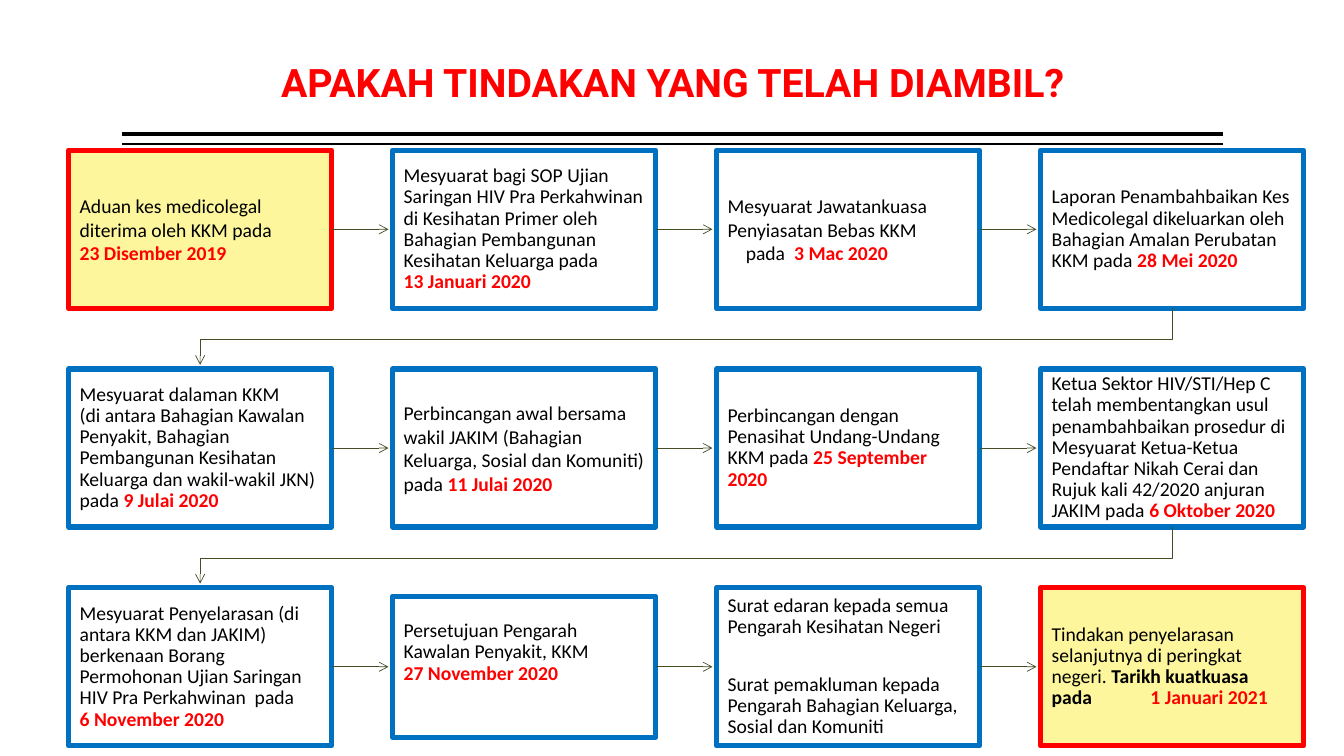
from lxml import etree
from pptx import Presentation
from pptx import util as u
from pptx.dml.color import RGBColor
from pptx.enum import shapes, text
from pptx.oxml import ns

PX = 9144
WIDE, HIGH = 1333, 750
FLOW = (68, 149, 1225, 591)
COLS, ROWS = 4, 3
BOX_W, BOX_H = 261, 157
SHORT = 140
GAP = 4
INSET = 11
RED, BLUE, BLACK = "FF0000", "0070C0", "000000"
CREAM, OLIVE = "FDF69C", "444D26"
MARKS = {"!": (RED, True), "*": (BLACK, True)}

STEPS = [
    ["Aduan kes medicolegal diterima oleh KKM pada", "|!23 Disember 2019"],
    ["Mesyuarat bagi SOP Ujian Saringan HIV Pra Perkahwinan di Kesihatan Primer oleh "
     "Bahagian Pembangunan Kesihatan Keluarga pada\n|!13 Januari 2020"],
    ["Mesyuarat Jawatankuasa Penyiasatan Bebas KKM", "pada  |!3 Mac 2020"],
    ["Laporan Penambahbaikan Kes Medicolegal dikeluarkan oleh Bahagian Amalan "
     "Perubatan KKM pada |!28 Mei 2020"],
    ["Mesyuarat dalaman KKM\n(di antara Bahagian Kawalan Penyakit, Bahagian Pembangunan "
     "Kesihatan Keluarga dan wakil-wakil JKN) pada |!9 Julai 2020"],
    ["Perbincangan awal bersama wakil JAKIM (Bahagian Keluarga, Sosial dan Komuniti) "
     "pada |!11 Julai 2020"],
    ["Perbincangan dengan Penasihat Undang-Undang KKM pada |!25 September 2020"],
    ["Ketua Sektor HIV/STI/Hep C telah membentangkan usul penambahbaikan prosedur di "
     "Mesyuarat Ketua-Ketua Pendaftar Nikah Cerai dan Rujuk kali 42/2020 anjuran JAKIM "
     "pada |!6 Oktober 2020"],
    ["Mesyuarat Penyelarasan (di antara KKM dan JAKIM) berkenaan Borang Permohonan "
     "Ujian Saringan HIV Pra Perkahwinan  pada\n|!6 November 2020"],
    ["Persetujuan Pengarah Kawalan Penyakit, KKM\n|!27 November 2020"],
    ["Surat edaran kepada semua Pengarah Kesihatan Negeri",
     "Surat pemakluman kepada Pengarah Bahagian Keluarga, Sosial dan Komuniti"],
    ["Tindakan penyelarasan selanjutnya di peringkat negeri. |*Tarikh kuatkuasa "
     "pada\t|!1 Januari 2021"],
]
LOOSE = (0, 2, 5)
ENDS = (0, 11)
INDENT, LETTER, APPROVE, START = 2, 10, 9, 11


def px(n):
    return u.Emu(round(n * PX))


def color(code):
    return RGBColor.from_string(code)


def stroke(shape, code, points, arrow=False):
    shape.line.color.rgb = color(code)
    shape.line.width = u.Pt(points)
    if arrow:
        ln = shape.element.spPr.find(ns.qn("a:ln"))
        etree.SubElement(ln, ns.qn("a:tailEnd"), type="arrow")


def link(slide, x1, y1, x2, y2, code, points, arrow=False):
    line = slide.shapes.add_connector(
        shapes.MSO_CONNECTOR.STRAIGHT, px(x1), px(y1), px(x2), px(y2))
    stroke(line, code, points, arrow)
    etree.SubElement(line.element.spPr, ns.qn("a:effectLst"))
    return line


def turn(slide, x1, y1, x2, y2):
    mid = y1 + 31
    form = slide.shapes.build_freeform(px(x1), px(y1), scale=1.0)
    form.add_line_segments(
        [(px(x), px(y)) for x, y in ((x1, mid), (x2, mid), (x2, y2))], close=False)
    bend = form.convert_to_shape()
    bend.fill.background()
    bend.shadow.inherit = False
    stroke(bend, OLIVE, 0.5, True)


def style(run, code, bold, size=14, face="Calibri"):
    run.font.name = face
    run.font.size = u.Pt(size)
    run.font.bold = bold
    run.font.color.rgb = color(code)


def write(para, words, tight):
    para.alignment = text.PP_ALIGN.LEFT
    para.line_spacing = 0.9 if tight else 1.0
    for part in filter(None, words.split("|")):
        code, bold = MARKS.get(part[0], (BLACK, False))
        for i, row in enumerate(part.lstrip("!*").split("\n")):
            if i:
                para.add_line_break()
            if row:
                run = para.add_run()
                run.text = row
                style(run, code, bold)


def step(slide, index, x, y, w, h):
    box = slide.shapes.add_shape(
        shapes.MSO_SHAPE.RECTANGLE, px(x), px(y), px(w), px(h))
    box.shadow.inherit = False
    if index in ENDS:
        box.fill.solid()
        box.fill.fore_color.rgb = color(CREAM)
    else:
        box.fill.background()
    stroke(box, RED if index in ENDS else BLUE, 3.78)
    frame = box.text_frame
    frame.word_wrap = True
    frame.vertical_anchor = text.MSO_ANCHOR.MIDDLE
    frame.margin_left = frame.margin_right = px(INSET)
    frame.margin_top = frame.margin_bottom = px(INSET)
    for i, words in enumerate(STEPS[index]):
        para = frame.add_paragraph() if i else frame.paragraphs[0]
        write(para, words, index not in LOOSE)
    props = frame.paragraphs[-1]._p.get_or_add_pPr()
    if index == INDENT:
        props.set("marL", str(px(18)))
    if index == LETTER:
        frame.paragraphs[0].space_after = u.Pt(26)
    if index == APPROVE:
        frame.margin_bottom = px(INSET + 28)
    if index == START:
        tabs = etree.SubElement(props, ns.qn("a:tabLst"))
        etree.SubElement(tabs, ns.qn("a:tab"), pos=str(px(98)), algn="l")
    return box


def flow(slide, x, y, w, h):
    across = (w - BOX_W) / (COLS - 1)
    down = (h - BOX_H) / (ROWS - 1)
    for index in range(len(STEPS)):
        row, col = divmod(index, COLS)
        left, top = x + col * across, y + row * down
        tall = SHORT if index == APPROVE else BOX_H
        box = step(slide, index, left, top + (BOX_H - tall) / 2, BOX_W, tall)
        if col < COLS - 1:
            mid = top + BOX_H / 2
            line = link(slide, left + BOX_W, mid, left + across - GAP, mid,
                        OLIVE, 0.5, True)
            line.begin_connect(box, 3)
        elif row < ROWS - 1:
            turn(slide, left + BOX_W / 2, top + BOX_H,
                 x + BOX_W / 2, top + down - GAP)


def head(slide, x, y, w, h):
    title = slide.shapes.title
    title.left, title.top, title.width, title.height = map(px, (x, y, w, h))
    frame = title.text_frame
    frame.text = "APAKAH TINDAKAN YANG TELAH DIAMBIL?"
    frame.word_wrap = True
    frame.auto_size = text.MSO_AUTO_SIZE.NONE
    frame.vertical_anchor = text.MSO_ANCHOR.BOTTOM
    frame.margin_left = frame.margin_right = 0
    frame.margin_top = frame.margin_bottom = px(5)
    para = frame.paragraphs[0]
    para.alignment = text.PP_ALIGN.CENTER
    para.line_spacing = 0.9
    style(para.runs[0], RED, True, 28, "Roboto")
    for drop, points in ((23, 3), (33, 1)):
        link(slide, x + w, y + h + drop, x, y + h + drop, BLACK, points)


def main():
    deck = Presentation()
    deck.slide_width, deck.slide_height = px(WIDE), px(HIGH)
    slide = deck.slides.add_slide(deck.slide_layouts[5])
    head(slide, 121, 35, 1092, 75)
    flow(slide, *FLOW)
    deck.save("out.pptx")


if __name__ == "__main__":
    main()
